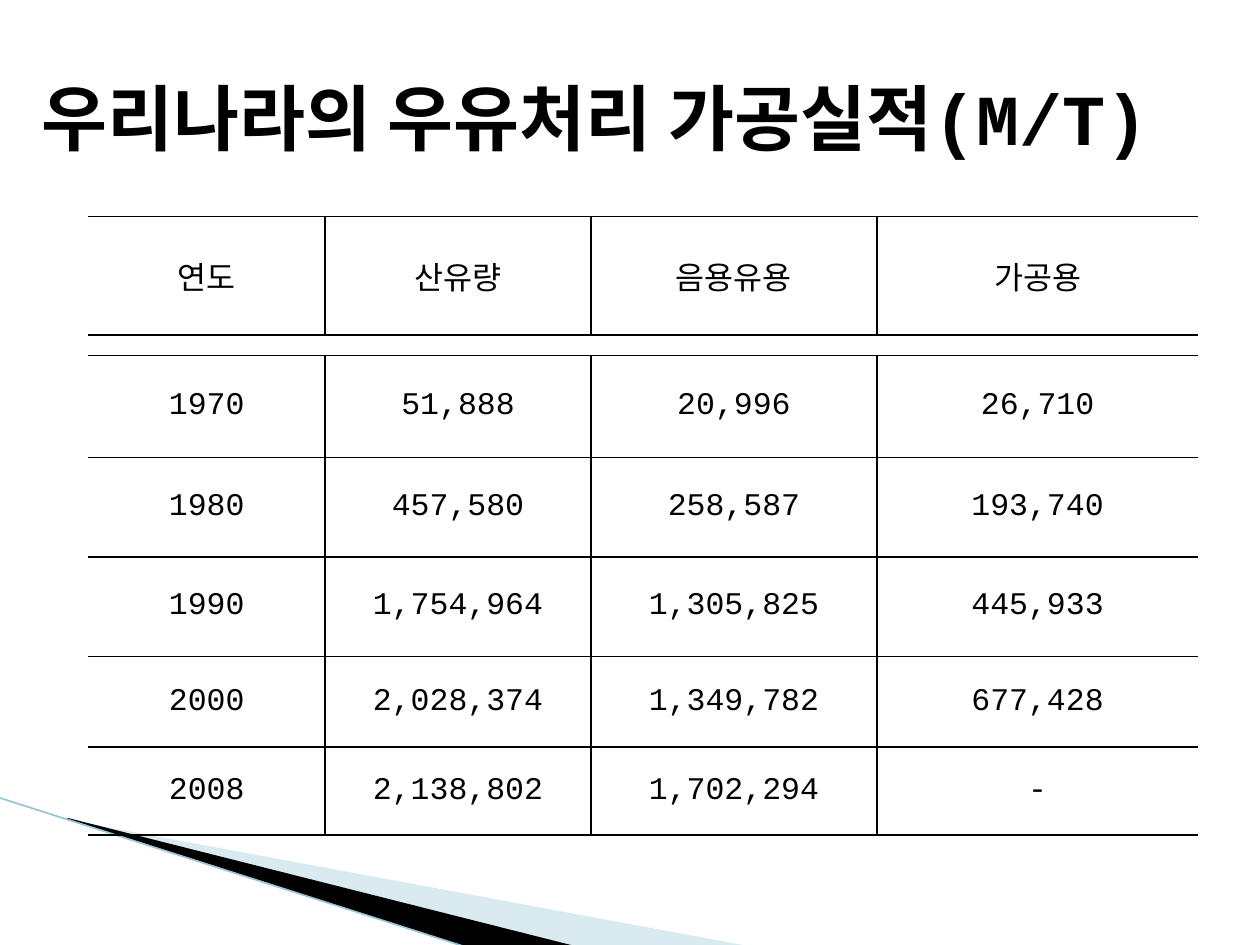
from lxml.etree import SubElement
from pptx import Presentation
from pptx.dml.color import RGBColor
from pptx.enum.shapes import MSO_CONNECTOR
from pptx.enum.text import MSO_ANCHOR, MSO_AUTO_SIZE, PP_ALIGN
from pptx.oxml import parse_xml
from pptx.oxml.ns import nsdecls, qn
from pptx.util import Inches, Pt

COLORS = {"ink": "000000", "mist": "A0CBDC", "edge": "97C5D8"}
FONT = "Courier New"

COLUMN_WIDTHS = [1.88, 2.11, 2.27, 2.55]
ROW_HEIGHTS = [0.94, 0.16, 0.81, 0.79, 0.79, 0.72, 0.7]
ROWS = [
    ["연도", "산유량", "음용유용", "가공용"],
    None,  # narrow gap under the heading
    ["1970", "51,888", "20,996", "26,710"],
    ["1980", "457,580", "258,587", "193,740"],
    ["1990", "1,754,964", "1,305,825", "445,933"],
    ["2000", "2,028,374", "1,349,782", "677,428"],
    ["2008", "2,138,802", "1,702,294", "-"],
]


class SlideBuilder:
    def __init__(self, page):
        self.page = page

    def color(self, name):
        return RGBColor.from_string(COLORS[name])

    def style(self, para, size, align, bold=False):
        para.alignment = align
        font = para.font
        font.name, font.size, font.bold = FONT, Pt(size), bold
        font.color.rgb = self.color("ink")

    def title(self, text, left, top, width, height):
        box = self.page.shapes.title
        box.left, box.top = Inches(left), Inches(top)
        box.width, box.height = Inches(width), Inches(height)
        frame = box.text_frame
        frame.text = text
        frame.word_wrap = True
        frame.auto_size = MSO_AUTO_SIZE.NONE
        frame.vertical_anchor = MSO_ANCHOR.MIDDLE
        self.style(frame.paragraphs[0], 41, PP_ALIGN.LEFT, bold=True)

    def wedge(self, points, color, opacity=None):
        corners = [(Inches(x), Inches(y)) for x, y in points]
        builder = self.page.shapes.build_freeform(*corners[0])
        builder.add_line_segments(corners[1:], close=True)
        shape = builder.convert_to_shape()
        shape.shadow.inherit = False
        shape.line.fill.background()
        shape.fill.solid()
        shape.fill.fore_color.rgb = self.color(color)
        if opacity is not None:
            tint = shape.fill._xPr.find(".//" + qn("a:srgbClr"))
            SubElement(tint, qn("a:alpha"), val=str(opacity * 1000))

    def line(self, start, end, color, width):
        ends = [Inches(value) for value in (*start, *end)]
        line = self.page.shapes.add_connector(MSO_CONNECTOR.STRAIGHT, *ends)
        line.line.color.rgb = self.color(color)
        line.line.width = Pt(width)
        SubElement(line._element.spPr, qn("a:effectLst"))

    def borders(self, cell, sides):
        properties = cell._tc.get_or_add_tcPr()
        for index, side in enumerate("LRTB"):
            fill = "<a:noFill/>"
            if side in sides:
                fill = f'<a:solidFill><a:srgbClr val="{COLORS["ink"]}"/></a:solidFill>'
            border = f'<a:ln{side} {nsdecls("a")} w="{Pt(1)}">{fill}</a:ln{side}>'
            properties.insert(index, parse_xml(border))

    def table(self, rows, widths, heights, left, top):
        frame = self.page.shapes.add_table(
            len(rows), len(widths), Inches(left), Inches(top),
            Inches(sum(widths)), Inches(sum(heights)))
        table = frame.table
        table.first_row = table.horz_banding = False
        for column, width in zip(table.columns, widths):
            column.width = Inches(width)
        last = len(widths) - 1
        for r, (values, height) in enumerate(zip(rows, heights)):
            table.rows[r].height = Inches(height)
            if values is None:
                table.cell(r, 0).merge(table.cell(r, last))
            for c in range(len(widths)):
                cell = table.cell(r, c)
                cell.fill.background()
                cell.vertical_anchor = MSO_ANCHOR.MIDDLE
                para = cell.text_frame.paragraphs[0]
                if values is None:
                    cell.margin_top = cell.margin_bottom = 0
                    SubElement(para._p, qn("a:endParaRPr"), sz="600")
                    self.borders(cell, "TB")
                    continue
                para.text = values[c]
                self.style(para, 18, PP_ALIGN.CENTER)
                inner = ("L" if c > 0 else "") + ("R" if c < last else "")
                self.borders(cell, "TB" + inner)


def main():
    deck = Presentation()
    deck.slide_width, deck.slide_height = Inches(10), Inches(7.5)
    slide = SlideBuilder(deck.slides.add_slide(deck.slide_layouts[5]))

    # Corner decoration
    slide.wedge([(0.55, 6.51), (5.95, 7.51), (4.56, 7.51), (0.55, 6.5)], "mist", 40)
    slide.wedge([(0.53, 6.49), (4.57, 7.51), (3.72, 7.52), (0.54, 6.5)], "ink")
    slide.line((-0.01, 6.33), (3.71, 7.52), "edge", 0.95)

    # Heading and figures
    slide.title("우리나라의 우유처리 가공실적(M/T)", 0.23, 0.3, 9.61, 1.25)
    slide.table(ROWS, COLUMN_WIDTHS, ROW_HEIGHTS, 0.7, 1.72)

    deck.save("out.pptx")


if __name__ == "__main__":
    main()
